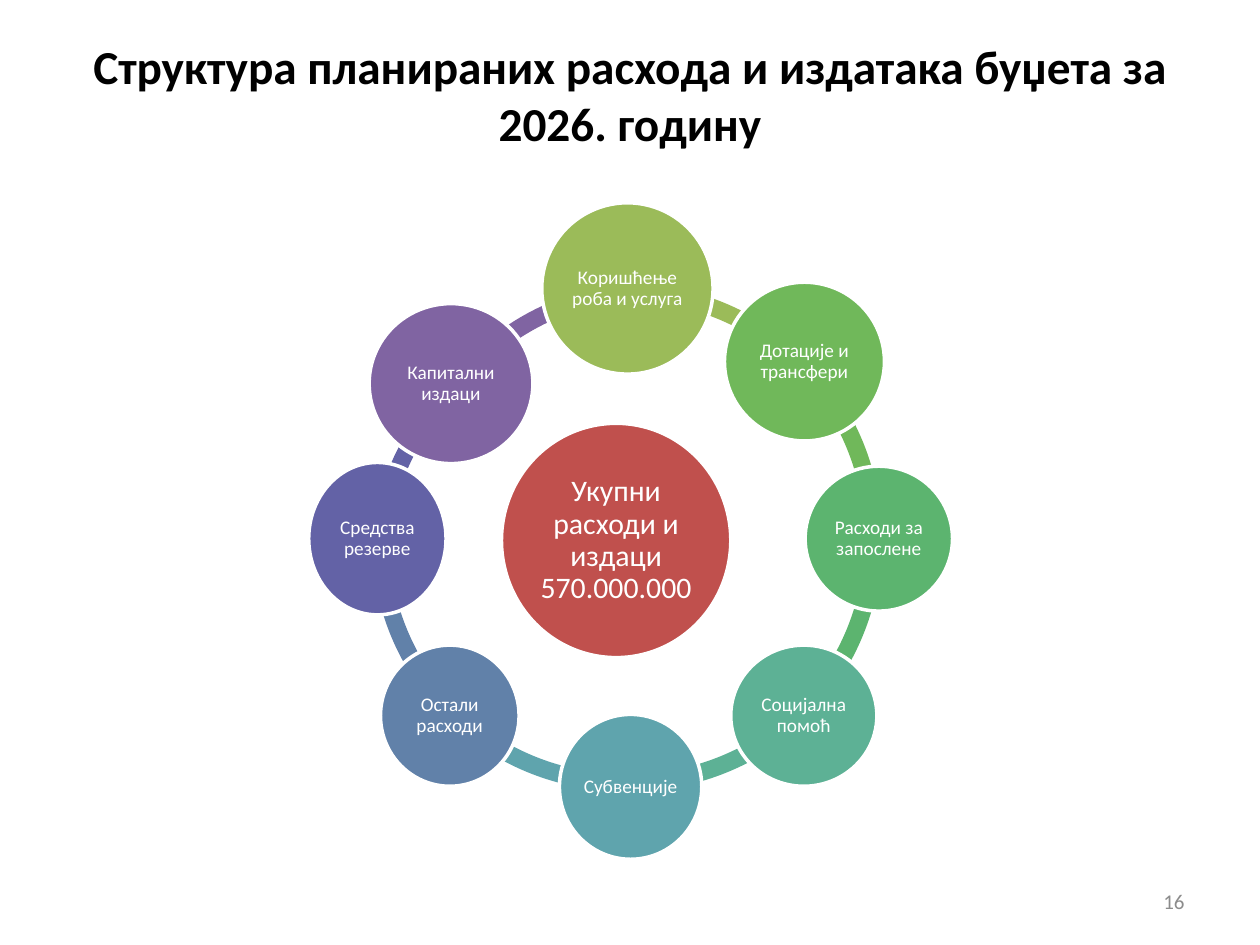
from pptx import Presentation
from pptx.dml.color import RGBColor
from pptx.enum.shapes import MSO_SHAPE
from pptx.enum.text import MSO_ANCHOR, MSO_AUTO_SIZE, PP_ALIGN
from pptx.util import Inches, Pt

ARC, OVAL = MSO_SHAPE.BLOCK_ARC, MSO_SHAPE.OVAL
CENTER, RIGHT = PP_ALIGN.CENTER, PP_ALIGN.RIGHT
MIDDLE = MSO_ANCHOR.MIDDLE
NO_FIT = MSO_AUTO_SIZE.NONE
FONT = "Calibri"
RING_SIZE = 4.05
RING_THICKNESS = 0.034

CATEGORIES = [
    ("Коришћење роба и услуга", "9BBB59", (1.35, -0.64, 1.36, 1.36), (0, 0), (162, 189)),
    ("Дотације и трансфери", "70B85A", (2.8, -0.01, 1.27, 1.26), (0, 0), (189, 0)),
    ("Расходи за запослене", "5CB46F", (3.44, 1.45, 1.17, 1.15), (0, 0), (0, 27)),
    ("Социјална помоћ", "5DB195", (2.85, 2.87, 1.16, 1.12), (0.03, -0.02), (27.56, 53.88)),
    ("Субвенције", "5FA4AD", (1.49, 3.42, 1.13, 1.15), (-0.02, -0.02), (53.1, 80.46)),
    ("Остали расходи", "6181A9", (0.07, 2.87, 1.1, 1.12), (0, 0), (81, 108)),
    ("Средства резерве", "6362A6", (-0.5, 1.42, 1.09, 1.21), (-0.01, 0.2), (111.49, 135.56)),
    ("Капитални издаци", "8064A2", (-0.02, 0.16, 1.3, 1.27), (0.18, -0.01), (130.7, 158.93)),
]


def rgb(value):
    return RGBColor.from_string(value)


def write(tf, text, size=11, color="FFFFFF", bold=False, align=CENTER, spacing=1.0, inset=None):
    tf.word_wrap = True
    tf.auto_size = NO_FIT
    tf.vertical_anchor = MIDDLE
    if inset is not None:
        tf.margin_left = tf.margin_right = tf.margin_top = tf.margin_bottom = Inches(inset)
    p = tf.paragraphs[0]
    p.alignment = align
    p.line_spacing = spacing
    r = p.add_run()
    r.text = text
    r.font.name = FONT
    r.font.size = Pt(size)
    r.font.bold = bold
    r.font.color.rgb = rgb(color)


def add_filled(s, kind, box, color):
    sp = s.shapes.add_shape(kind, *map(Inches, box))
    sp.shadow.inherit = False
    sp.fill.solid()
    sp.fill.fore_color.rgb = rgb(color)
    sp.line.fill.background()
    return sp


def add_arc(s, left, top, color, start, end):
    sp = add_filled(s, ARC, (left, top, RING_SIZE, RING_SIZE), color)
    for i, value in enumerate((start, end, RING_THICKNESS)):
        sp.adjustments[i] = value


def add_circle(s, box, color, text, size=11):
    sp = add_filled(s, OVAL, box, color)
    sp.line.color.rgb = rgb("FFFFFF")
    sp.line.width = Pt(2)
    write(sp.text_frame, text, size=size, spacing=0.9, inset=0.02)


def add_title(s, box, text):
    sp = s.shapes.title
    sp.left, sp.top, sp.width, sp.height = map(Inches, box)
    write(sp.text_frame, text, size=27, color="000000", bold=True)


def add_budget_wheel(s, left, top):
    for _, color, _, (dx, dy), (start, end) in reversed(CATEGORIES):
        add_arc(s, left + dx, top + dy, color, start, end)
    add_circle(s, (left + 1.03, top + 1.11, 1.82, 1.86), "C0504D",
               "Укупни расходи и издаци 570.000.000", size=17)
    for text, color, (x, y, w, h), _, _ in CATEGORIES:
        add_circle(s, (left + x, top + y, w, h), color, text)


def add_page_number(s, box, number):
    sp = s.shapes.add_textbox(*map(Inches, box))
    write(sp.text_frame, number, size=12, color="8C8C8C", align=RIGHT)


def main():
    prs = Presentation()
    prs.slide_width, prs.slide_height = Inches(10), Inches(7.5)
    s = prs.slides.add_slide(prs.slide_layouts[5])
    add_title(s, (0.5, 0.28, 9, 0.93),
              "Структура планираних расхода и издатака буџета за 2026. годину")
    add_budget_wheel(s, 2.95, 2.25)
    add_page_number(s, (7.17, 6.95, 2.33, 0.4), "16")
    prs.save("out.pptx")


if __name__ == "__main__":
    main()
